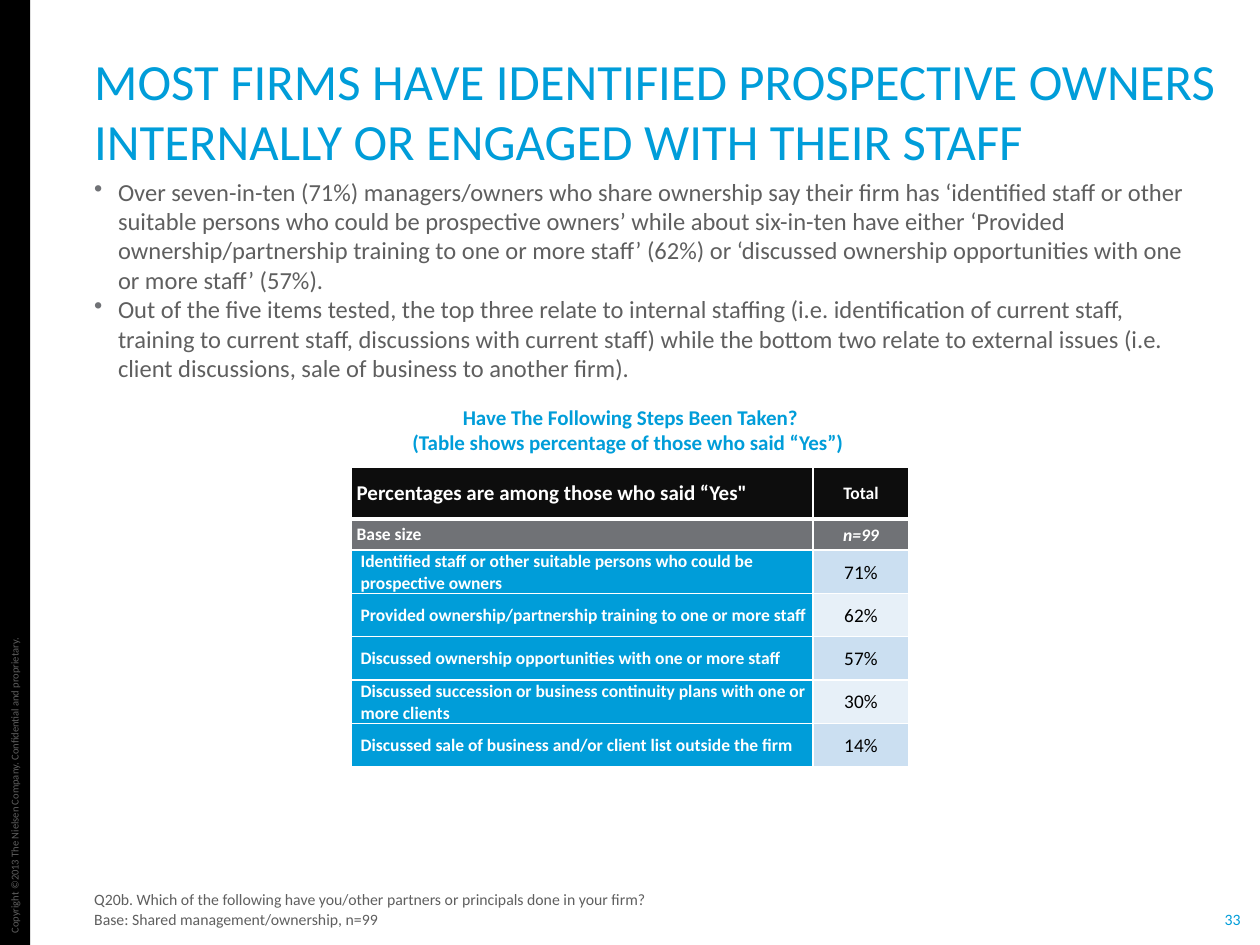
from dataclasses import dataclass
from typing import Optional

from lxml import etree
from pptx import Presentation
from pptx import util as u
from pptx.dml.color import RGBColor
from pptx.enum import shapes, text
from pptx.oxml.ns import qn

Cm, Pt = u.Cm, u.Pt
HUES = {
    "blue": "009DD9", "grey": "5F5F5F", "mid": "707276", "black": "000000",
    "head": "0D0D0D", "white": "FFFFFF", "dark": "CBDFF1", "light": "E7F0F8",
}
LEFT, MID = text.PP_ALIGN.LEFT, text.PP_ALIGN.CENTER
TOP, CORE, BASE = (text.MSO_ANCHOR.TOP, text.MSO_ANCHOR.MIDDLE,
                   text.MSO_ANCHOR.BOTTOM)


@dataclass
class Box:
    """A text box; lengths in cm, sizes in points."""
    at: tuple[float, float, float, float]
    lines: list[str]
    size: float
    hue: str
    align: text.PP_ALIGN = LEFT
    anchor: text.MSO_ANCHOR = TOP
    pad: tuple[float, float] = (0.25, 0)
    bold: bool = False
    wrap: bool = True
    turn: float = 0
    gap: float = 0
    dots: bool = False


@dataclass
class Entry:
    """One table cell."""
    words: str
    fill: str
    size: float = 10
    hue: str = "white"
    bold: bool = True
    slant: bool = False
    align: text.PP_ALIGN = LEFT
    pads: tuple[float, float, float, float] = (0.03, 0.03, 0.03, 0)
    inset: float = 0


def style(para, size: float, hue: str, bold: bool = False) -> None:
    font = para.font
    font.name, font.size, font.bold = "Calibri", Pt(size), bold
    font.color.rgb = RGBColor.from_string(HUES[hue])


def indent(para, left: float, first: float = 0) -> None:
    props = para._p.get_or_add_pPr()
    props.set("marL", str(Cm(left)))
    props.set("indent", str(Cm(first)))


def bullet(para) -> None:
    indent(para, 0.48, -0.48)
    props = para._p.get_or_add_pPr()
    tint = etree.SubElement(props, qn("a:buClr"))
    etree.SubElement(tint, qn("a:srgbClr"), val=HUES["mid"])
    etree.SubElement(props, qn("a:buChar"), char="•")


def draw_box(slide, box: Box) -> None:
    shape = slide.shapes.add_textbox(*map(Cm, box.at))
    shape.rotation = box.turn
    frame = shape.text_frame
    frame.word_wrap, frame.vertical_anchor = box.wrap, box.anchor
    frame.margin_left = frame.margin_right = Cm(box.pad[0])
    frame.margin_top = frame.margin_bottom = Cm(box.pad[1])
    for i, line in enumerate(box.lines):
        para = frame.add_paragraph() if i else frame.paragraphs[0]
        para.text, para.alignment = line, box.align
        if i and box.gap:
            para.space_before = Pt(box.gap)
        if box.dots:
            bullet(para)
        style(para, box.size, box.hue, box.bold)


def edge(cell, low: Optional[float] = None, high: Optional[float] = None) -> None:
    """White borders, one point unless the lower or upper edge differs."""
    props = cell._tc.get_or_add_tcPr()
    widths = {"lnL": 1, "lnR": 1, "lnT": high or 1, "lnB": low or 1}
    for i, (tag, width) in enumerate(widths.items()):
        line = etree.Element(qn(f"a:{tag}"), w=str(Pt(width)))
        fill = etree.SubElement(line, qn("a:solidFill"))
        etree.SubElement(fill, qn("a:srgbClr"), val=HUES["white"])
        props.insert(i, line)


def draw_cell(cell, entry: Entry) -> None:
    cell.fill.solid()
    cell.fill.fore_color.rgb = RGBColor.from_string(HUES[entry.fill])
    cell.vertical_anchor = CORE
    (cell.margin_left, cell.margin_top,
     cell.margin_right, cell.margin_bottom) = map(Cm, entry.pads)
    para = cell.text_frame.paragraphs[0]
    para.text, para.alignment = entry.words, entry.align
    if entry.inset:
        indent(para, entry.inset)
    style(para, entry.size, entry.hue, entry.bold)
    para.font.italic = entry.slant


def draw_table(slide, rows: list[tuple[Entry, Entry]]) -> None:
    wide, tall = [9.3, 1.93], [1.04, 0.61] + [0.87] * (len(rows) - 2)
    frame = slide.shapes.add_table(len(rows), 2, Cm(7.09), Cm(9.42),
                                   Cm(sum(wide)), Cm(sum(tall)))
    table = frame.table
    for col, width in zip(table.columns, wide):
        col.width = Cm(width)
    for r, (row, high) in enumerate(zip(rows, tall)):
        table.rows[r].height = Cm(high)
        for c, entry in enumerate(row):
            cell = table.cell(r, c)
            draw_cell(cell, entry)
            edge(cell, low=3 if r == 0 else None, high=3 if r == 1 else None)


BOXES = [
    # Side strip and page number
    Box((-3, 15.52, 6.58, 0.51),
        ["Copyright ©2013 The Nielsen Company. Confidential and proprietary."],
        6, "grey", pad=(0.25, 0.13), wrap=False, turn=270),
    Box((24.66, 18.34, 0.38, 0.38), ["33"], 9, "blue", MID, CORE,
        pad=(0, 0), wrap=False),
    # Main points
    Box((1.65, 3.56, 22.66, 2.16), [
        "Over seven-in-ten (71%) managers/owners who share ownership say their "
        "firm has ‘identified staff or other suitable persons who could be "
        "prospective owners’ while about six-in-ten have either ‘Provided "
        "ownership/partnership training to one or more staff’ (62%) or "
        "‘discussed ownership opportunities with one or more staff’ (57%).",
        "Out of the five items tested, the top three relate to internal "
        "staffing (i.e. identification of current staff, training to current "
        "staff, discussions with current staff) while the bottom two relate to "
        "external issues (i.e. client discussions, sale of business to another "
        "firm)."], 14, "grey", dots=True),
    # Title
    Box((1.65, 1.88, 23.75, 1.57),
        ["MOST FIRMS HAVE IDENTIFIED PROSPECTIVE OWNERS INTERNALLY OR ENGAGED "
         "WITH THEIR STAFF"], 29, "blue", anchor=BASE),
    # Footnote
    Box((1.65, 17.7, 23.75, 1.02),
        ["Q20b. Which of the following have you/other partners or principals "
         "done in your firm?", "Base: Shared management/ownership, n=99"],
        9, "grey", anchor=BASE, gap=0.6),
    # Table caption
    Box((6.78, 8.15, 11.86, 0.71),
        ["Have The Following Steps Been Taken?",
         "(Table shows percentage of those who said “Yes”) "],
        12, "blue", MID, bold=True),
]

STEPS = [
    ("Identified staff or other suitable persons who could be prospective owners", 71),
    ("Provided ownership/partnership training to one or more staff", 62),
    ("Discussed ownership opportunities with one or more staff", 57),
    ("Discussed succession or business continuity plans with one or more clients", 30),
    ("Discussed sale of business and/or client list outside the firm", 14),
]
EVEN = (0.1, 0.1, 0.1, 0.1)


def main() -> None:
    deck = Presentation()
    deck.slide_width, deck.slide_height = Cm(25.4), Cm(19.05)
    slide = deck.slides.add_slide(deck.slide_layouts[6])

    # Black strip on the left
    strip = slide.shapes.add_shape(shapes.MSO_SHAPE.RECTANGLE, 0, 0,
                                   Cm(0.61), Cm(19.05))
    strip.shadow.inherit = False
    strip.fill.solid()
    strip.fill.fore_color.rgb = RGBColor.from_string(HUES["black"])
    strip.line.fill.background()

    for box in BOXES:
        draw_box(slide, box)

    # Table: heading, base size, then steps in alternating tints
    rows = [
        (Entry("Percentages are among those who said “Yes\"", "head", 12, pads=EVEN),
         Entry("Total", "head", align=MID, pads=EVEN)),
        (Entry("Base size", "mid", pads=EVEN),
         Entry("n=99", "mid", slant=True, align=MID)),
    ]
    for i, (step, share) in enumerate(STEPS):
        tint = "light" if i % 2 else "dark"
        rows.append((Entry(step, "blue", inset=0.15),
                     Entry(f"{share}%", tint, 11, "black", False, align=MID)))
    draw_table(slide, rows)
    deck.save("out.pptx")


if __name__ == "__main__":
    main()
